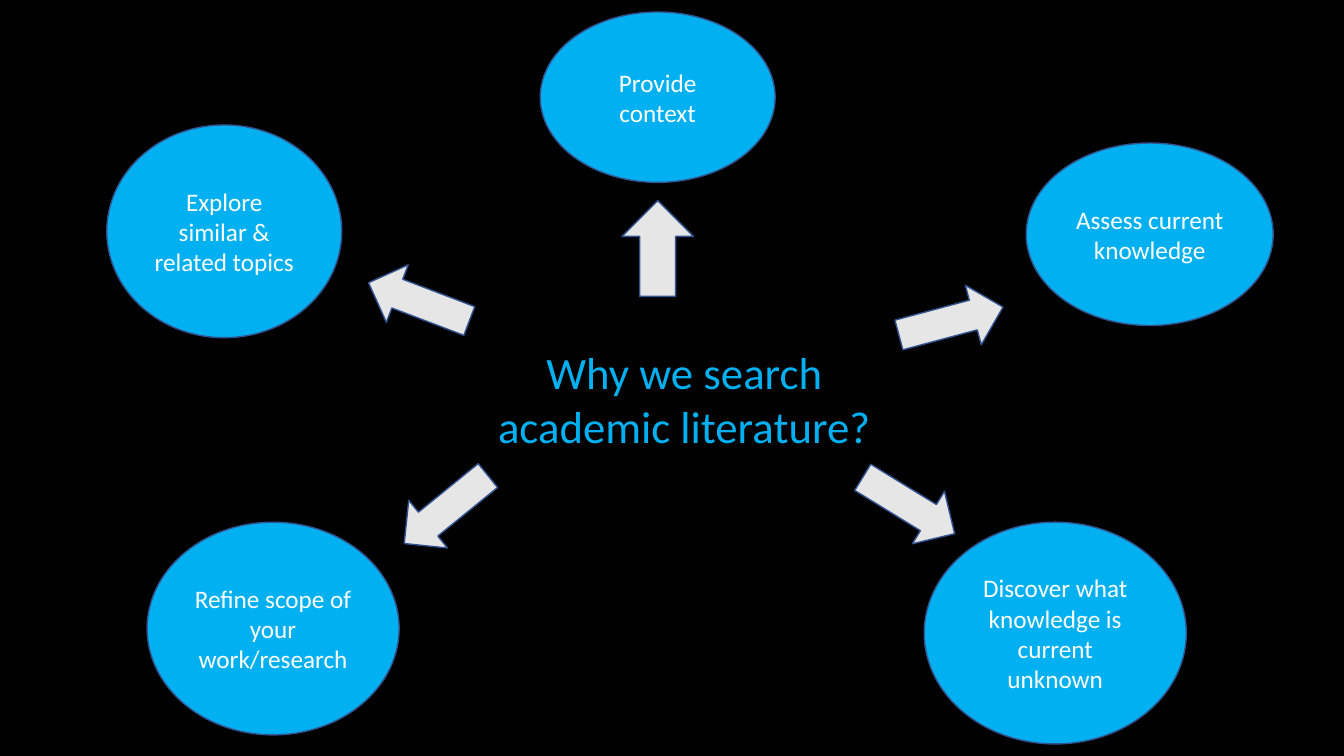
import pptx
import pptx.util
import pptx.dml.color
import pptx.enum.shapes
import pptx.enum.text

Pt = pptx.util.Pt
SHAPES = pptx.enum.shapes.MSO_SHAPE
ANCHOR = pptx.enum.text.MSO_ANCHOR

COLOURS = {
    "background": "000000",
    "accent": "00B0F0",
    "outline": "325491",
    "arrow": "E7E6E6",
    "label": "FFFFFF",
}

# label, bubble (left, top, width, height)
REASONS = [
    ("Refine scope of your work/research", (105.1, 373, 180, 151.9)),
    ("Explore similar & related topics", (76.3, 89.3, 167.8, 151.9)),
    ("Assess current knowledge", (733, 102.2, 176.4, 130.3)),
    ("Provide context", (385.9, 8.6, 167.8, 121.7)),
    ("Discover what knowledge is current unknown", (660.2, 373, 187.2, 158.4)),
]

# centre, size, rotation in degrees
ARROW_SIZE = (77, 43.9)
ARROWS = [
    ((299.2, 215.6), ARROW_SIZE, 200.8),
    ((469.8, 177.5), (68.4, 51.1), 270),
    ((679.3, 229.3), ARROW_SIZE, 345),
    ((318.6, 364), ARROW_SIZE, 140.9),
    ((649.1, 361.1), ARROW_SIZE, 31.5),
]


def colour(name):
    return pptx.dml.color.RGBColor.from_string(COLOURS[name])


class ReasonsSlide:
    """Holds the slide and the style shared by its elements."""

    font = "Calibri"

    def __init__(self, presentation):
        self.slide = presentation.slides.add_slide(presentation.slide_layouts[6])
        fill = self.slide.background.fill
        fill.solid()
        fill.fore_color.rgb = colour("background")

    def set_text(self, shape, text, size, colour_name, anchor):
        text_frame = shape.text_frame
        text_frame.text = text
        text_frame.word_wrap = True
        text_frame.vertical_anchor = anchor
        paragraph = text_frame.paragraphs[0]
        paragraph.alignment = pptx.enum.text.PP_ALIGN.CENTER
        font = paragraph.runs[0].font
        font.name = self.font
        font.size = Pt(size)
        font.color.rgb = colour(colour_name)

    def outlined_shape(self, kind, box, fill_name):
        shape = self.slide.shapes.add_shape(kind, *map(Pt, box))
        shape.shadow.inherit = False
        shape.fill.solid()
        shape.fill.fore_color.rgb = colour(fill_name)
        shape.line.color.rgb = colour("outline")
        shape.line.width = Pt(1)
        return shape

    def question(self, text, box):
        shape = self.slide.shapes.add_textbox(*map(Pt, box))
        self.set_text(shape, text, 32, "accent", ANCHOR.TOP)

    def bubble(self, text, box):
        shape = self.outlined_shape(SHAPES.FLOWCHART_CONNECTOR, box, "accent")
        self.set_text(shape, text, 18, "label", ANCHOR.MIDDLE)

    def arrow(self, centre, size, rotation):
        (x, y), (width, height) = centre, size
        box = (x - width / 2, y - height / 2, width, height)
        shape = self.outlined_shape(SHAPES.RIGHT_ARROW, box, "arrow")
        shape.rotation = rotation


def main():
    presentation = pptx.Presentation()
    presentation.slide_width = Pt(960)
    presentation.slide_height = Pt(540)

    slide = ReasonsSlide(presentation)
    slide.question("Why we search academic literature?", (332.6, 242.6, 312.5, 85))
    for label, box in REASONS:
        slide.bubble(label, box)
    for centre, size, rotation in ARROWS:
        slide.arrow(centre, size, rotation)

    presentation.save("out.pptx")


if __name__ == "__main__":
    main()
